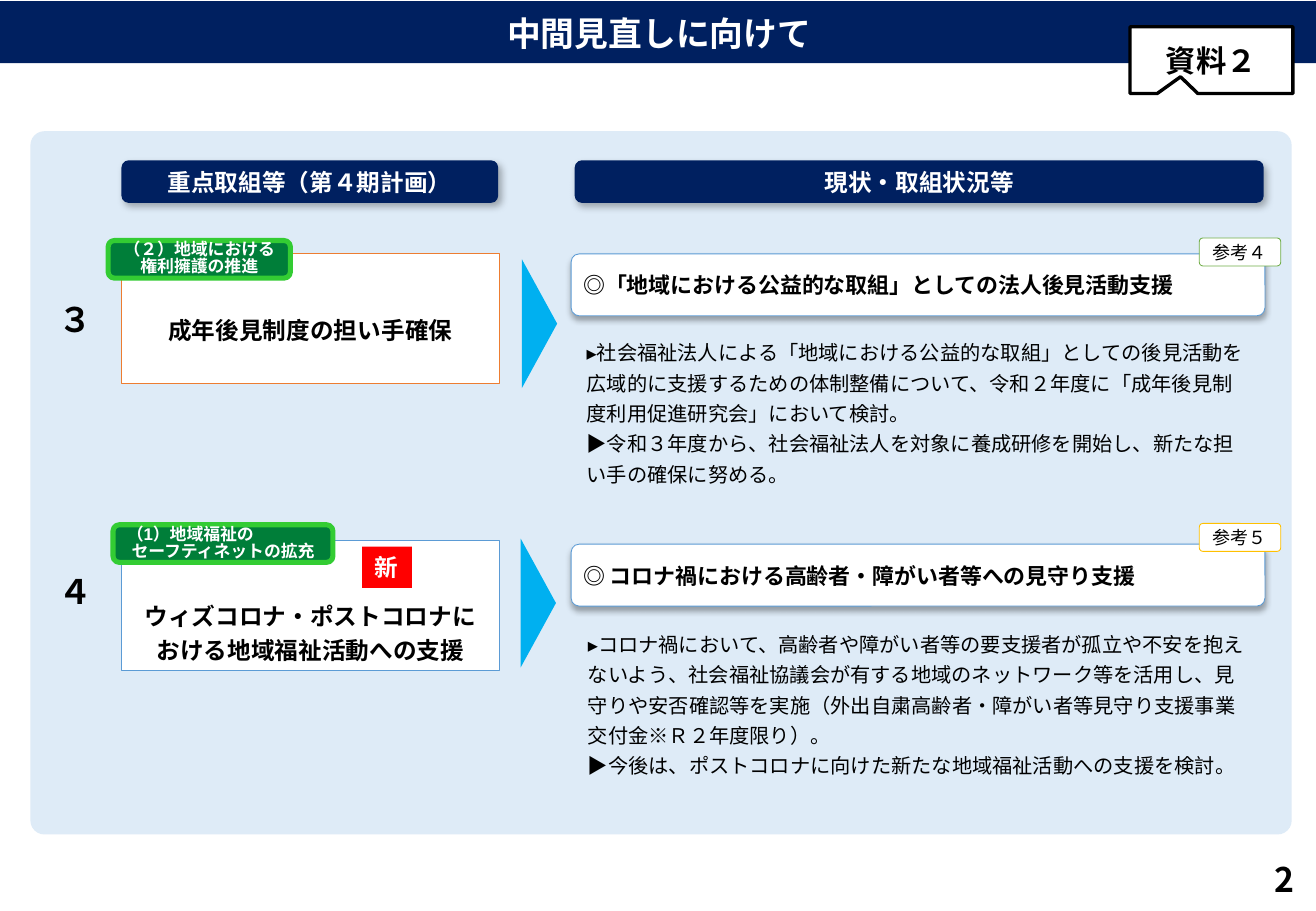
from lxml.etree import SubElement
from pptx import Presentation
from pptx.dml.color import RGBColor
from pptx.enum.shapes import MSO_SHAPE
from pptx.enum.text import MSO_ANCHOR, MSO_AUTO_SIZE, PP_ALIGN
from pptx.oxml.ns import qn
from pptx.util import Inches, Pt

COLORS = {
    "navy": "002060", "white": "FFFFFF", "black": "000000", "panel": "DEEBF7",
    "sky": "00B0F0", "blue": "5B9BD5", "orange": "ED7D31", "leaf": "70AD47",
    "gold": "FFC000", "green": "007E39", "lime": "33CC33", "red": "FF0000",
}
FONT = "Noto Sans CJK JP"
CELL = 0.1  # inches per grid column and row
LEFT, CENTER = PP_ALIGN.LEFT, PP_ALIGN.CENTER
# Shadows: opacity in %, blur and distance in points, direction in degrees
BAR_SHADOW = (32, 3.5, 2.2, 90)
HEAD_SHADOW = (30, 4.5, 2.6, 53)


def grid(n):
    return Inches(n * CELL)


def rgb(name):
    return RGBColor.from_string(COLORS[name])


class Board:
    """Holds the current slide and draws each kind of element on its grid."""

    def __init__(self, prs):
        self.s = prs.slides.add_slide(prs.slide_layouts[5])

    def text(self, sp, lines, size, color="black", bold=True, align=CENTER,
             spacing=None, inset=(1, 0.5, 1, 0.5), anchor=MSO_ANCHOR.MIDDLE, font=FONT):
        tf = sp.text_frame
        tf.word_wrap = True
        tf.auto_size = MSO_AUTO_SIZE.NONE
        tf.vertical_anchor = anchor
        tf.margin_left, tf.margin_top, tf.margin_right, tf.margin_bottom = map(grid, inset)
        aligns = align if isinstance(align, tuple) else (align,) * len(lines)
        for i, (line, side) in enumerate(zip(lines, aligns)):
            p = tf.add_paragraph() if i else tf.paragraphs[0]
            p.text = line
            p.alignment = side
            if spacing:
                p.line_spacing = Pt(spacing)
            p.font.size, p.font.bold, p.font.name = Pt(size), bold, font
            p.font.color.rgb = rgb(color)
            # Japanese typeface next to the Latin one
            props = p._p.pPr.find(qn("a:defRPr"))
            SubElement(props, qn("a:ea"), typeface=FONT)

    def title(self, box, line):
        sp = self.s.shapes.title
        sp.left, sp.top, sp.width, sp.height = map(grid, box)
        sp.fill.solid()
        sp.fill.fore_color.rgb = rgb("navy")
        self.text(sp, [line], 20, "white", spacing=17.9, inset=(0.7, 1, 0.7, 0))

    def shape(self, kind, box, fill=None, line=None, width=0.5, adj=(), shadow=None):
        sp = self.s.shapes.add_shape(kind, *map(grid, box))
        sp.shadow.inherit = False
        for i, value in enumerate(adj):
            sp.adjustments[i] = value
        if fill:
            sp.fill.solid()
            sp.fill.fore_color.rgb = rgb(fill)
        else:
            sp.fill.background()
        if line:
            sp.line.color.rgb = rgb(line)
            sp.line.width = Pt(width)
        else:
            sp.line.fill.background()
        if shadow:
            self.cast(sp, *shadow)
        return sp

    def cast(self, sp, opacity, blur, dist, angle):
        effects = sp._element.spPr.find(qn("a:effectLst"))
        outer = SubElement(effects, qn("a:outerShdw"), blurRad=str(Pt(blur)),
                           dist=str(Pt(dist)), dir=str(angle * 60000),
                           algn="tl", rotWithShape="0")
        tint = SubElement(outer, qn("a:srgbClr"), val=COLORS["black"])
        SubElement(tint, qn("a:alpha"), val=str(opacity * 1000))

    def rounded(self, box, adj=0.13, **look):
        return self.shape(MSO_SHAPE.ROUNDED_RECTANGLE, box, adj=(adj,), **look)

    def heading(self, col, width, line):
        sp = self.rounded((col, 13.2, width, 3.5), 0.167, fill="navy", shadow=HEAD_SHADOW)
        self.text(sp, [line], 14, "white", inset=(0,) * 4)

    def number(self, box, line):
        self.text(self.shape(MSO_SHAPE.OVAL, box), [line], 20)

    def arrow(self, col, row):
        sp = self.shape(MSO_SHAPE.FLOWCHART_EXTRACT, (col, row, 10.6, 2.9), "sky")
        sp.rotation = 90

    def topic(self, row, lines, border, bottom):
        sp = self.shape(MSO_SHAPE.RECTANGLE, (10, row, 31.1, 10.7), "white", border)
        self.text(sp, lines, 14, spacing=20, inset=(0.3, 0.5, 0.3, bottom),
                  anchor=MSO_ANCHOR.BOTTOM)

    def tag(self, box, lines, align):
        sp = self.rounded(box, 0.167, fill="green", line="lime", width=3)
        self.text(sp, lines, 10, "white", align=align, spacing=10, font="Arial")

    def status(self, row, line):
        sp = self.rounded((47, row, 57.1, 5.1), fill="white", line="blue", shadow=BAR_SHADOW)
        self.text(sp, [line], 13, align=LEFT, spacing=16, inset=(0.8,) * 4)

    def reference(self, row, line, border):
        sp = self.rounded((98.7, row, 6.7, 2.3), fill="white", line=border)
        self.text(sp, [line], 10.7, bold=False, inset=(0,) * 4)

    def details(self, col, row, lines):
        self.text(self.rounded((col, row, 57.1, 15.4)), lines, 12, bold=False,
                  align=LEFT, spacing=18, inset=(0.8,) * 4)


MEASURES = [
    dict(
        number=("３", 22.7), arrow=(39.1, 25.2),
        topic=(20.9, ["成年後見制度の担い手確保"], "orange", 3.28),
        tag=((8.9, 19.8, 15, 3.1), ["（２）地域における", "権利擁護の推進"], CENTER),
        status=(20.9, "◎「地域における公益的な取組」としての法人後見活動支援"),
        reference=(19.6, "参考４", "leaf"),
        details=(46.9, 26.1, [
            "▸社会福祉法人による「地域における公益的な取組」としての後見活動を広域的に支援する"
            "ための体制整備について、令和２年度に「成年後見制度利用促進研究会」において検討。",
            "▶令和３年度から、社会福祉法人を対象に養成研修を開始し、新たな担い手の確保に努める。",
        ]),
    ),
    dict(
        number=("４", 45.1), arrow=(39, 48.2),
        topic=(44.5, ["ウィズコロナ・ポストコロナに", "おける地域福祉活動への支援"], "blue", 0.5),
        tag=((9.3, 43.2, 18.1, 3.1), ["（1）地域福祉の", "セーフティネットの拡充"],
             (LEFT, CENTER)),
        status=(44.8, "◎ コロナ禍における高齢者・障がい者等への見守り支援"),
        reference=(43.1, "参考５", "gold"),
        details=(47, 50.1, [
            "▸コロナ禍において、高齢者や障がい者等の要支援者が孤立や不安を抱えないよう、"
            "社会福祉協議会が有する地域のネットワーク等を活用し、見守りや安否確認等を実施"
            "（外出自粛高齢者・障がい者等見守り支援事業交付金※Ｒ２年度限り）。",
            "▶今後は、ポストコロナに向けた新たな地域福祉活動への支援を検討。",
        ]),
    ),
]


def main():
    prs = Presentation()
    prs.slide_width, prs.slide_height = Inches(10.83), Inches(7.5)
    board = Board(prs)

    # Title band and document label
    board.title((0, 0.1, 108.5, 5.1), "中間見直しに向けて")
    label = board.shape(MSO_SHAPE.RECTANGULAR_CALLOUT, (93, 2.2, 13.4, 5.5),
                        "white", "black", 2, (-0.19, 0.25))
    board.text(label, ["資料２"], 18)

    # Panel and column headings
    board.rounded((2.5, 10.8, 103.8, 57.9), 0.02, fill="panel")
    board.heading(10, 31, "重点取組等（第４期計画）")
    board.heading(47.3, 56.7, "現状・取組状況等")

    # One row per measure
    for m in MEASURES:
        digit, row = m["number"]
        board.number((2.9, row, 6.2, 7.1), digit)
        board.arrow(*m["arrow"])
        board.topic(*m["topic"])
        board.tag(*m["tag"])
        board.details(*m["details"])
        board.status(*m["status"])
        board.reference(*m["reference"])

    # Mark for the new measure
    new = board.shape(MSO_SHAPE.RECTANGLE, (29.8, 45, 4.1, 3.4), "red")
    board.text(new, ["新"], 14, "white", align=LEFT, anchor=MSO_ANCHOR.TOP)

    # Page number
    board.number((103.1, 69.9, 5.2, 5), "2")
    prs.save("out.pptx")


if __name__ == "__main__":
    main()
